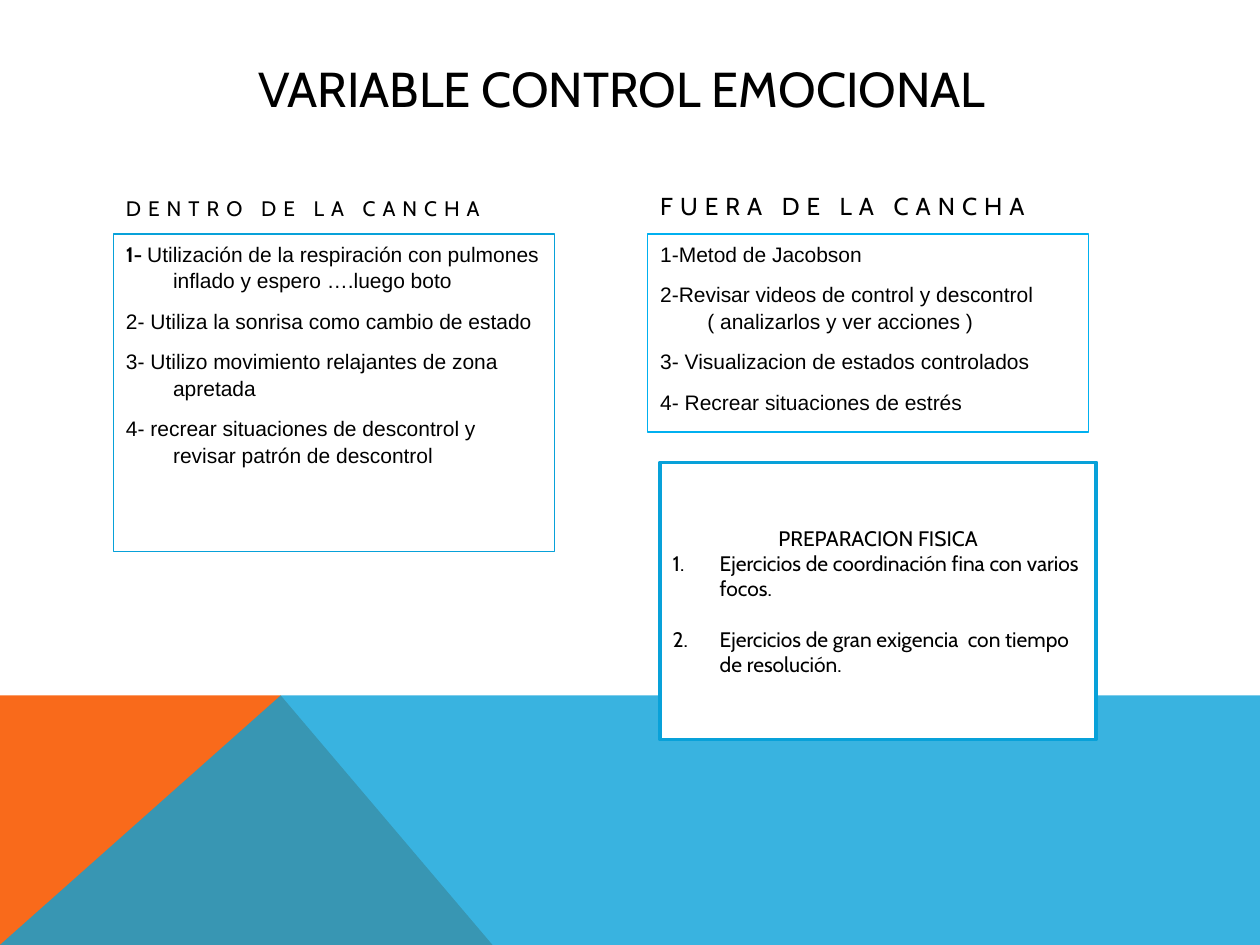
from pptx import Presentation
from pptx.dml.color import RGBColor
from pptx.enum.shapes import MSO_SHAPE
from pptx.enum.text import MSO_ANCHOR, PP_ALIGN
from pptx.oxml.ns import qn
from pptx.util import Cm, Pt
from lxml import etree

RECT = MSO_SHAPE.RECTANGLE
TOP, MIDDLE, BOTTOM = MSO_ANCHOR.TOP, MSO_ANCHOR.MIDDLE, MSO_ANCHOR.BOTTOM
LEFT, CENTER = PP_ALIGN.LEFT, PP_ALIGN.CENTER
BLACK = RGBColor(0x00, 0x00, 0x00)
WHITE = RGBColor(0xFF, 0xFF, 0xFF)
ORANGE = RGBColor(0xF9, 0x6A, 0x1B)
BLUE = RGBColor(0x08, 0xA1, 0xD9)
SKY = RGBColor(0x00, 0xB0, 0xF0)

# Content
TITLE = "VARIABLE CONTROL EMOCIONAL"
COLUMNS = [
    {"head": "DENTRO DE LA CANCHA", "size": 12, "left": 2.29, "height": 6.4, "line": BLUE,
     "items": [("1- ", "Utilización de la respiración con pulmones inflado y espero ….luego boto"),
               ("", "2- Utiliza la sonrisa como cambio de estado"),
               ("", "3- Utilizo movimiento relajantes de zona apretada"),
               ("", "4- recrear situaciones de descontrol y revisar patrón de descontrol")]},
    {"head": "FUERA DE LA CANCHA", "size": 14, "left": 13.06, "height": 3.99, "line": SKY,
     "items": [("", "1-Metod de Jacobson"),
               ("", "2-Revisar videos de control y descontrol ( analizarlos y ver acciones )"),
               ("", "3- Visualizacion de estados controlados"),
               ("", "4- Recrear situaciones de estrés")]},
]
TRAINING_HEAD = "PREPARACION FISICA"
TRAINING = ["Ejercicios de coordinación fina con varios focos.",
            "Ejercicios de gran exigencia  con tiempo de resolución."]

# Layout in cm
WIDTH, HEIGHT = 25.4, 19.05
BAND_TOP, PEAK, FOOT = 14.02, 5.66, 9.93
COL_WIDTH, HEAD_TOP, HEAD_HEIGHT, BODY_TOP = 8.89, 3.05, 1.52, 4.72
HANG = 0.95
BANDS = [
    (ORANGE, 100, [(0, HEIGHT), (0, BAND_TOP), (PEAK, BAND_TOP), (FOOT, HEIGHT)]),
    (BLUE, 80, [(0, HEIGHT), (PEAK, BAND_TOP), (WIDTH, BAND_TOP), (WIDTH, HEIGHT)]),
]

prs = Presentation()
prs.slide_width, prs.slide_height = Cm(WIDTH), Cm(HEIGHT)
s = prs.slides.add_slide(prs.slide_layouts[6])


def add_band(color, opacity, points):
    corners = [(Cm(x), Cm(y)) for x, y in points]
    builder = s.shapes.build_freeform(*corners[0])
    builder.add_line_segments(corners[1:], close=True)
    sp = builder.convert_to_shape()
    sp.shadow.inherit = False
    sp.fill.solid()
    sp.fill.fore_color.rgb = color
    sp.line.fill.background()
    if opacity < 100:
        clr = sp._element.spPr.find(qn("a:solidFill"))[0]
        etree.SubElement(clr, qn("a:alpha"), val=str(opacity * 1000))


def frame(sp, anchor):
    tf = sp.text_frame
    tf.word_wrap = True
    tf.vertical_anchor = anchor
    return tf


def add_text(box, anchor):
    return frame(s.shapes.add_textbox(*map(Cm, box)), anchor)


def add_panel(box, anchor, line, weight, fill=None):
    sp = s.shapes.add_shape(RECT, *map(Cm, box))
    sp.shadow.inherit = False
    if fill is None:
        sp.fill.background()
    else:
        sp.fill.solid()
        sp.fill.fore_color.rgb = fill
    sp.line.color.rgb = line
    sp.line.width = Pt(weight)
    return frame(sp, anchor)


def add_paragraph(tf, first=False, indent=0, hang=0, **formats):
    p = tf.paragraphs[0] if first else tf.add_paragraph()
    for name, value in {"alignment": LEFT, **formats}.items():
        setattr(p, name, value)
    if indent:
        pPr = p._p.get_or_add_pPr()
        pPr.set("marL", str(Cm(indent)))
        pPr.set("indent", str(-Cm(hang)))
    return p


def add_run(p, text, spacing=0, **formats):
    r = p.add_run()
    r.text = text
    r.font.color.rgb = BLACK
    for name, value in {"name": "Cabin", "size": Pt(12), **formats}.items():
        setattr(r.font, name, value)
    if spacing:
        r._r.get_or_add_rPr().set("spc", str(spacing * 100))


# Colour bands at the foot
for band in BANDS:
    add_band(*band)

# Title
tf = add_text((2.29, 1.02, 20.88, 1.52), MIDDLE)
add_run(add_paragraph(tf, True, indent=2.67), TITLE, size=Pt(28))

# Two columns: heading and list
for col in COLUMNS:
    tf = add_text((col["left"], HEAD_TOP, COL_WIDTH, HEAD_HEIGHT), BOTTOM)
    add_run(add_paragraph(tf, True), col["head"], spacing=4, size=Pt(col["size"]))
    tf = add_panel((col["left"], BODY_TOP, COL_WIDTH, col["height"]), TOP, col["line"], 0.75)
    for i, (lead, text) in enumerate(col["items"]):
        p = add_paragraph(tf, i == 0, HANG, HANG, line_spacing=1.05,
                          space_before=Pt(8 if i else 0))
        if lead:
            add_run(p, lead, bold=True)
        add_run(p, text, name="Arial")

# Physical training panel
tf = add_panel((13.31, 9.32, 8.79, 5.59), MIDDLE, BLUE, 2, WHITE)
add_run(add_paragraph(tf, True, alignment=CENTER), TRAINING_HEAD)
for i, text in enumerate(TRAINING):
    p = add_paragraph(tf, False, HANG, HANG, space_before=Pt(14.5 if i else 0))
    etree.SubElement(p._p.get_or_add_pPr(), qn("a:buAutoNum"), type="arabicPeriod")
    add_run(p, text)

prs.save("out.pptx")
